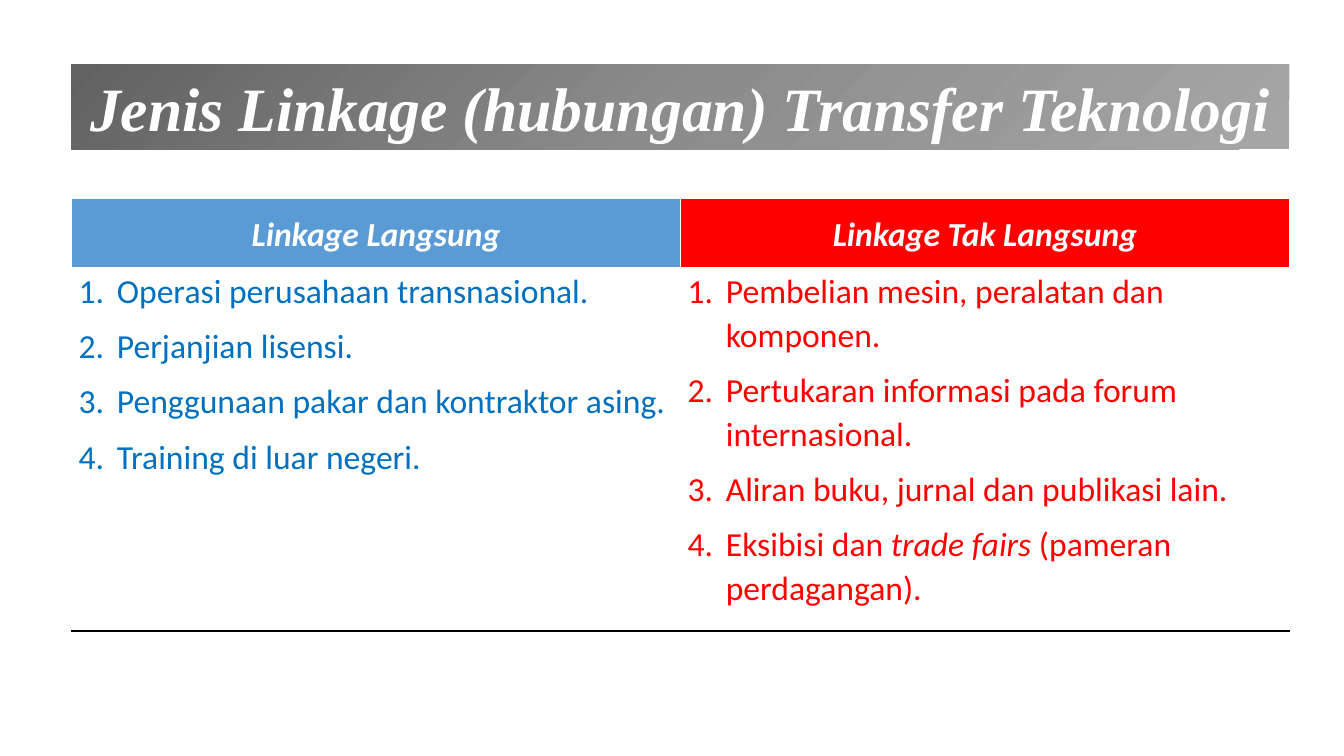
from pptx import Presentation
from pptx.dml.color import RGBColor
from pptx.enum.shapes import MSO_SHAPE as Shape
from pptx.enum.text import MSO_ANCHOR as Anchor, MSO_AUTO_SIZE as Fit, PP_ALIGN as Align
from pptx.oxml import parse_xml
from pptx.oxml.ns import nsdecls
from pptx.util import Inches, Pt

WHITE = RGBColor(0xFF, 0xFF, 0xFF)
BLACK = RGBColor(0, 0, 0)
SKY = RGBColor(0x5B, 0x9B, 0xD5)
BLUE = RGBColor(0x00, 0x70, 0xC0)
RED = RGBColor(0xFF, 0, 0)
GREYS = [(0, RGBColor(0x62, 0x62, 0x62)), (50, RGBColor(0x8C, 0x8C, 0x8C)),
         (100, RGBColor(0xA6, 0xA6, 0xA6))]

LEFT, WIDTH = 0.71, 12.08
ROWS = [0.7, 3.59]

# Heading, heading fill, list colour, list items as runs (odd runs are italic)
LINKS = [
    ("Linkage Langsung", SKY, BLUE, [
        ["Operasi perusahaan transnasional."],
        ["Perjanjian lisensi."],
        ["Penggunaan pakar dan kontraktor asing."],
        ["Training di luar negeri."],
    ]),
    ("Linkage Tak Langsung", RED, RED, [
        ["Pembelian mesin, peralatan dan komponen."],
        ["Pertukaran informasi pada forum internasional."],
        ["Aliran buku, jurnal dan publikasi lain."],
        ["Eksibisi dan ", "trade fairs", " (pameran perdagangan)."],
    ]),
]


def style(run, size, color, face="Calibri", bold=False, italic=False):
    font = run.font
    font.size, font.name = Pt(size), face
    font.bold, font.italic = bold, italic
    font.color.rgb = color


def shade(shape, stops):
    """Fill the shape with a round gradient that starts at its top left corner."""
    marks = "".join(f'<a:gs pos="{pos * 1000}"><a:srgbClr val="{color}"/></a:gs>'
                    for pos, color in stops)
    shape._element.spPr.insert(2, parse_xml(
        f'<a:gradFill {nsdecls("a")} rotWithShape="1"><a:gsLst>{marks}</a:gsLst>'
        '<a:path path="circle"><a:fillToRect r="100000" b="100000"/></a:path>'
        '</a:gradFill>'))


def add_title(slide, text):
    bar = slide.shapes.add_shape(Shape.RECTANGLE, Inches(LEFT), Inches(0.64),
                                 Inches(WIDTH), Inches(0.84))
    shade(bar, GREYS)
    bar.line.fill.background()
    bar.shadow.inherit = False
    frame = bar.text_frame
    frame.word_wrap = True
    frame.auto_size = Fit.SHAPE_TO_FIT_TEXT
    frame.text = text
    para = frame.paragraphs[0]
    para.alignment = Align.CENTER
    style(para.runs[0], 44, WHITE, "Times New Roman", True, True)


def set_edges(cell, base, width):
    """Draw thin white edges, with the given colour and width at the bottom."""
    edges = [("L", WHITE, 1), ("R", WHITE, 1), ("T", WHITE, 1), ("B", base, width)]
    props = cell._tc.get_or_add_tcPr()
    for i, (side, color, size) in enumerate(edges):
        props.insert(i, parse_xml(
            f'<a:ln{side} {nsdecls("a")} w="{Pt(size)}"><a:solidFill>'
            f'<a:srgbClr val="{color}"/></a:solidFill></a:ln{side}>'))


def set_pads(cell):
    cell.margin_left = cell.margin_right = Inches(0.07)
    cell.margin_top = cell.margin_bottom = 0


def fill_head(cell, text, color):
    set_pads(cell)
    cell.fill.solid()
    cell.fill.fore_color.rgb = color
    set_edges(cell, WHITE, 3)
    cell.vertical_anchor = Anchor.MIDDLE
    cell.text_frame.text = text
    para = cell.text_frame.paragraphs[0]
    para.alignment = Align.CENTER
    para.line_spacing = 1.07
    style(para.runs[0], 24, WHITE, bold=True, italic=True)


def number(para):
    props = para._p.get_or_add_pPr()
    props.set("marL", str(Inches(0.38)))
    props.set("indent", str(-Inches(0.38)))
    for item in ('buFont {} typeface="+mj-lt"', 'buAutoNum {} type="arabicPeriod"'):
        props.append(parse_xml(f'<a:{item.format(nsdecls("a"))}/>'))
    props.append(parse_xml(f'<a:tabLst {nsdecls("a")}>'
                           f'<a:tab pos="{Inches(0.5)}" algn="l"/></a:tabLst>'))


def fill_list(cell, items, color):
    set_pads(cell)
    cell.fill.background()
    set_edges(cell, BLACK, 1)
    frame = cell.text_frame
    for i, parts in enumerate(items):
        para = frame.add_paragraph() if i else frame.paragraphs[0]
        number(para)
        para.line_spacing = 1.07
        para.space_after = Pt(8)
        for j, part in enumerate(parts):
            run = para.add_run()
            run.text = part
            style(run, 24, color, italic=j % 2 == 1)


def add_links(slide):
    table = slide.shapes.add_table(len(ROWS), len(LINKS), Inches(LEFT), Inches(1.97),
                                   Inches(WIDTH), Inches(sum(ROWS))).table
    table.horz_banding = False
    for row, height in zip(table.rows, ROWS):
        row.height = Inches(height)
    for col, (head, fill, color, items) in enumerate(LINKS):
        table.columns[col].width = Inches(WIDTH / len(LINKS))
        fill_head(table.cell(0, col), head, fill)
        fill_list(table.cell(1, col), items, color)


def main():
    deck = Presentation()
    deck.slide_width, deck.slide_height = Inches(13.33), Inches(7.5)
    slide = deck.slides.add_slide(deck.slide_layouts[6])
    add_title(slide, "Jenis Linkage (hubungan) Transfer Teknologi")
    add_links(slide)
    deck.save("out.pptx")


if __name__ == "__main__":
    main()
